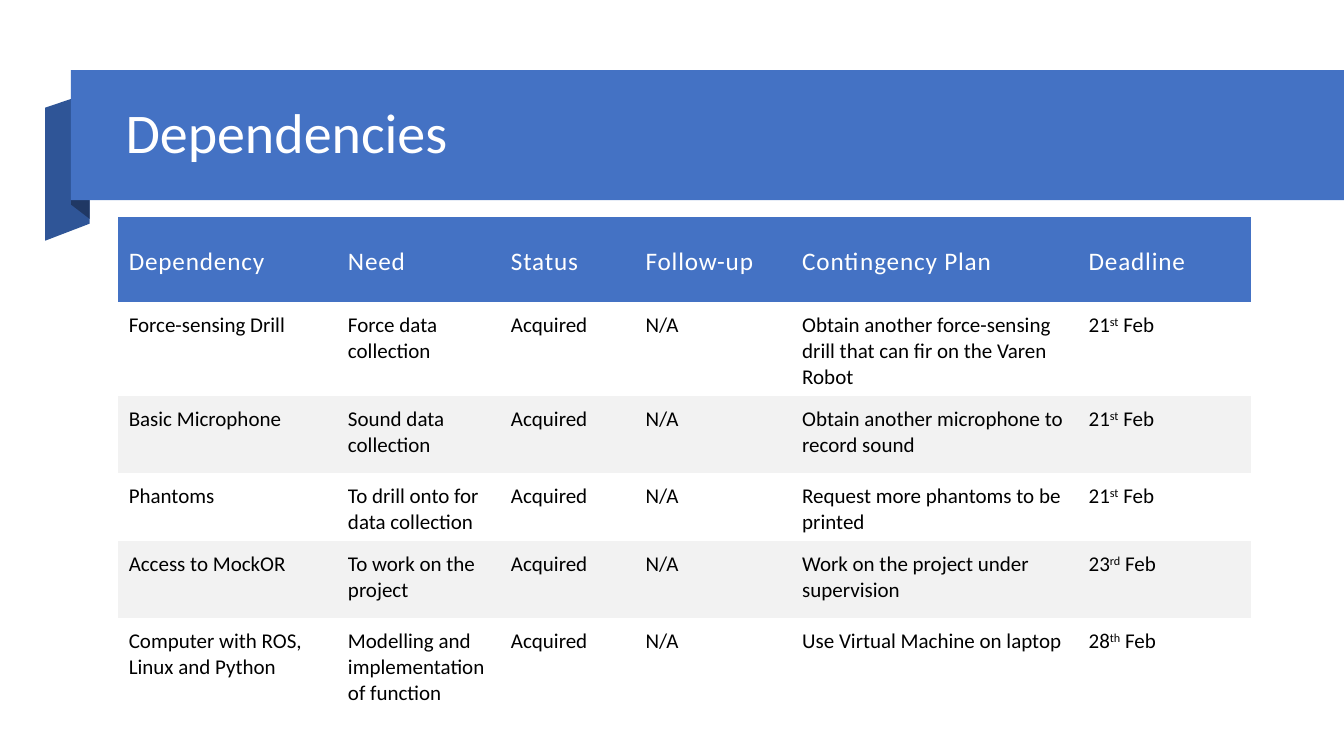
from dataclasses import dataclass

from pptx import Presentation
from pptx.dml.color import RGBColor
from pptx.enum.shapes import MSO_SHAPE
from pptx.enum.text import MSO_ANCHOR, PP_ALIGN
from pptx.util import Pt

RECTANGLE = MSO_SHAPE.RECTANGLE
MIDDLE, TOP = MSO_ANCHOR.MIDDLE, MSO_ANCHOR.TOP
LEFT = PP_ALIGN.LEFT
TITLE_ONLY_LAYOUT = 5
NO_STYLE_NO_GRID = "{2D5ABB26-0587-4C30-8999-92F81FD0307C}"

HEADINGS = ["Dependency", "Need", "Status", "Follow-up", "Contingency Plan", "Deadline"]
# Each deadline is a day, its ordinal suffix and a month.
DEPENDENCIES = [
    ("Force-sensing Drill", "Force data collection",
     "Obtain another force-sensing drill that can fir on the Varen Robot", ("21", "st", " Feb")),
    ("Basic Microphone", "Sound data collection",
     "Obtain another microphone to record sound", ("21", "st", " Feb")),
    ("Phantoms", "To drill onto for data collection",
     "Request more phantoms to be printed", ("21", "st", " Feb")),
    ("Access to MockOR", "To work on the project",
     "Work on the project under supervision", ("23", "rd", " Feb")),
    ("Computer with ROS, Linux and Python", "Modelling and implementation of function",
     "Use Virtual Machine on laptop", ("28", "th", " Feb")),
]
COLUMN_WIDTHS = [156.6, 116.4, 96.2, 111.9, 204.6, 123.7]
ROW_HEIGHTS = [60.7, 55, 55, 35.3, 55, 74]


@dataclass(frozen=True)
class Theme:
    font: str = "Calibri"
    title_size: float = 40
    heading_size: float = 18
    body_size: float = 15
    heading_spacing: float = 0.6
    banner: RGBColor = RGBColor(0x44, 0x72, 0xC4)
    ribbon: RGBColor = RGBColor(0x2F, 0x55, 0x97)
    ribbon_shade: RGBColor = RGBColor(0x20, 0x38, 0x64)
    band: RGBColor = RGBColor(0xF2, 0xF2, 0xF2)
    light_text: RGBColor = RGBColor(0xFF, 0xFF, 0xFF)
    dark_text: RGBColor = RGBColor(0x00, 0x00, 0x00)


class SlideBuilder:
    def __init__(self, slide, theme):
        self.slide = slide
        self.theme = theme

    def paint(self, shape, color):
        shape.shadow.inherit = False
        shape.fill.solid()
        shape.fill.fore_color.rgb = color
        shape.line.fill.background()

    def style_paragraph(self, paragraph, size, color):
        paragraph.alignment = LEFT
        paragraph.font.name = self.theme.font
        paragraph.font.size = Pt(size)
        paragraph.font.color.rgb = color

    def polygon(self, points, color):
        corners = [(Pt(x), Pt(y)) for x, y in points]
        outline = self.slide.shapes.build_freeform(*corners[0])
        outline.add_line_segments(corners[1:], close=True)
        self.paint(outline.convert_to_shape(), color)

    def rectangle(self, left, top, width, height, color):
        shape = self.slide.shapes.add_shape(RECTANGLE, Pt(left), Pt(top), Pt(width), Pt(height))
        self.paint(shape, color)

    def title(self, text, left, top, width, height):
        """Place the title above every shape drawn so far."""
        shape = self.slide.shapes.title
        shape.left, shape.top, shape.width, shape.height = map(Pt, (left, top, width, height))
        self.slide.shapes.element.append(shape.element)
        frame = shape.text_frame
        frame.text = text
        frame.word_wrap = True
        frame.vertical_anchor = MIDDLE
        paragraph = frame.paragraphs[0]
        paragraph.line_spacing = 0.9
        self.style_paragraph(paragraph, self.theme.title_size, self.theme.light_text)

    def cell(self, cell, content, is_heading, fill):
        """Fill one cell; a tuple holds a number, a raised suffix and the rest."""
        theme = self.theme
        cell.margin_left = cell.margin_right = cell.margin_top = Pt(7.7)
        cell.margin_bottom = Pt(4.3)
        cell.vertical_anchor = MIDDLE if is_heading else TOP
        if fill is None:
            cell.fill.background()
        else:
            cell.fill.solid()
            cell.fill.fore_color.rgb = fill
        paragraph = cell.text_frame.paragraphs[0]
        if is_heading:
            self.style_paragraph(paragraph, theme.heading_size, theme.light_text)
        else:
            self.style_paragraph(paragraph, theme.body_size, theme.dark_text)
        parts = content if isinstance(content, tuple) else (content,)
        for position, part in enumerate(parts):
            run = paragraph.add_run()
            run.text = part
            if is_heading:
                run.font._element.set("spc", str(round(theme.heading_spacing * 100)))
            if position == 1:
                run.font._element.set("baseline", "30000")

    def table(self, left, top, column_widths, row_heights, rows):
        frame = self.slide.shapes.add_table(
            len(rows), len(column_widths), Pt(left), Pt(top),
            Pt(sum(column_widths)), Pt(sum(row_heights)))
        table = frame.table
        table.first_row = table.horz_banding = False
        table._tbl.tblPr[0].text = NO_STYLE_NO_GRID
        for column, width in zip(table.columns, column_widths):
            column.width = Pt(width)
        for row_index, (row, height, contents) in enumerate(zip(table.rows, row_heights, rows)):
            row.height = Pt(height)
            is_heading = row_index == 0
            if is_heading:
                fill = self.theme.banner
            else:
                fill = self.theme.band if row_index % 2 == 0 else None
            for cell, content in zip(row.cells, contents):
                self.cell(cell, content, is_heading, fill)


def main():
    presentation = Presentation()
    presentation.slide_width, presentation.slide_height = Pt(960), Pt(540)
    layout = presentation.slide_layouts[TITLE_ONLY_LAYOUT]
    theme = Theme()
    builder = SlideBuilder(presentation.slides.add_slide(layout), theme)

    builder.polygon([(64.1, 159.8), (32.2, 172), (32.2, 77), (64.1, 66.2)], theme.ribbon)
    builder.polygon([(64.1, 156.4), (50.8, 146.2), (50.8, 50.4), (64.1, 61.2)], theme.ribbon_shade)
    builder.rectangle(50.6, 50.2, 909.4, 92.8, theme.banner)
    builder.title("Dependencies", 82.5, 61.9, 811.4, 69.1)

    rows = [HEADINGS]
    for dependency, need, plan, deadline in DEPENDENCIES:
        rows.append([dependency, need, "Acquired", "N/A", plan, deadline])
    builder.table(84.3, 155, COLUMN_WIDTHS, ROW_HEIGHTS, rows)

    presentation.save("out.pptx")


if __name__ == "__main__":
    main()
